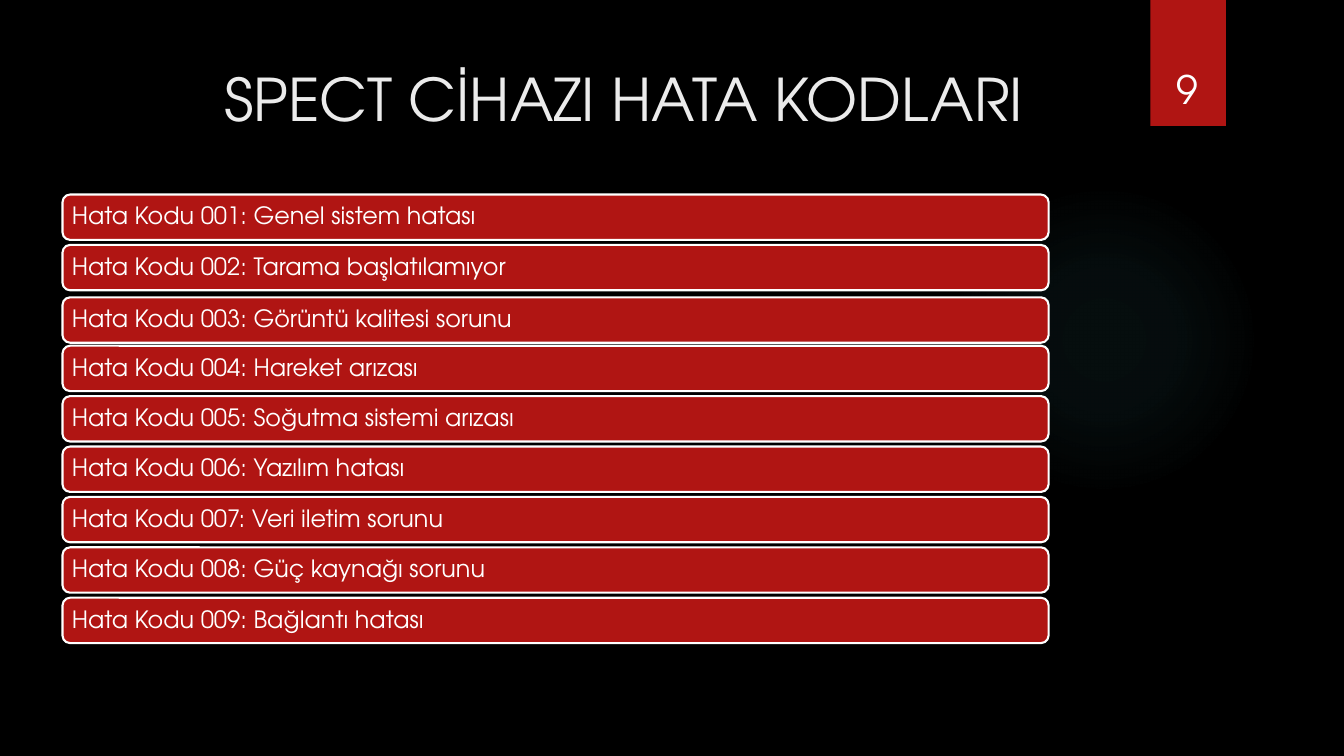
"""Build the slide that lists the SPECT device error codes."""
from lxml.etree import fromstring
from pptx import Presentation
from pptx.dml.color import RGBColor
from pptx.enum.shapes import MSO_SHAPE
from pptx.enum.text import MSO_ANCHOR, PP_ALIGN
from pptx.util import Inches, Pt

TITLE = "SPECT CİHAZI HATA KODLARI"
PAGE_NUMBER = "9"
ERRORS = [
    "Genel sistem hatası",
    "Tarama başlatılamıyor",
    "Görüntü kalitesi sorunu",
    "Hareket arızası",
    "Soğutma sistemi arızası",
    "Yazılım hatası",
    "Veri iletim sorunu",
    "Güç kaynağı sorunu",
    "Bağlantı hatası",
]
FONT = "TeX Gyre Adventor"
BLACK, RED, WHITE, PALE, TEAL = "000000", "B01513", "FFFFFF", "EBEBEB", "50B9C1"
GLOW_STOPS = [(0, 7), (36, 6), (69, 0)]
FIRST_TOP, ROW_STEP = 1.93, 0.5
ROW_NUDGE = {3: 0.02}
NAMESPACE = "http://schemas.openxmlformats.org/drawingml/2006/main"


def color(value):
    return RGBColor.from_string(value)


def add_shape(page, kind, left, top, width, height, fill):
    shape = page.shapes.add_shape(
        kind, Inches(left), Inches(top), Inches(width), Inches(height))
    shape.shadow.inherit = False
    shape.fill.solid()
    shape.fill.fore_color.rgb = color(fill)
    shape.line.fill.background()
    return shape


def write(frame, text, size, text_color, align, anchor):
    frame.word_wrap = True
    frame.vertical_anchor = anchor
    para = frame.paragraphs[0]
    para.text = text
    para.alignment = align
    para.font.name = FONT
    para.font.size = Pt(size)
    para.font.color.rgb = color(text_color)
    return para


def add_glow(page):
    glow = add_shape(page, MSO_SHAPE.OVAL, 9.41, 1.83, 3.08, 3.08, TEAL)
    stops = "".join(
        f'<a:gs pos="{position * 1000}"><a:srgbClr val="{TEAL}">'
        f'<a:alpha val="{opacity * 1000}"/></a:srgbClr></a:gs>'
        for position, opacity in GLOW_STOPS)
    gradient = fromstring(
        f'<a:gradFill xmlns:a="{NAMESPACE}"><a:gsLst>{stops}</a:gsLst>'
        '<a:path path="circle"><a:fillToRect l="50000" t="50000" r="50000" b="50000"/>'
        '</a:path></a:gradFill>')
    properties = glow.element.spPr
    properties.replace(properties.find(f"{{{NAMESPACE}}}solidFill"), gradient)


def add_error(page, number, description):
    top = FIRST_TOP + (number - 1) * ROW_STEP + ROW_NUDGE.get(number, 0)
    bar = add_shape(page, MSO_SHAPE.ROUNDED_RECTANGLE, 0.62, top, 9.78, 0.45, RED)
    bar.line.color.rgb = color(WHITE)
    bar.line.width = Pt(1.5)
    frame = bar.text_frame
    frame.margin_left = frame.margin_right = Inches(0.07)
    frame.margin_top = frame.margin_bottom = Inches(0.07)
    para = write(frame, f"Hata Kodu {number:03}: {description}", 17, WHITE,
                 PP_ALIGN.LEFT, MSO_ANCHOR.MIDDLE)
    para.line_spacing = 0.9
    para.space_after = Pt(6)


def main():
    deck = Presentation()
    deck.slide_width, deck.slide_height = Inches(13.33), Inches(7.5)
    page = deck.slides.add_slide(deck.slide_layouts[5])
    page.background.fill.solid()
    page.background.fill.fore_color.rgb = color(BLACK)

    add_glow(page)
    add_shape(page, MSO_SHAPE.RECTANGLE, 11.41, 0, 0.75, 1.25, RED)

    title = page.shapes.title
    title.left, title.top = Inches(1.04), Inches(0.57)
    title.width, title.height = Inches(10.29), Inches(1.53)
    write(title.text_frame, TITLE, 42, PALE, PP_ALIGN.CENTER, MSO_ANCHOR.TOP)

    for number, description in enumerate(ERRORS, start=1):
        add_error(page, number, description)

    number_box = page.shapes.add_textbox(
        Inches(11.32), Inches(0.32), Inches(0.92), Inches(0.84))
    write(number_box.text_frame, PAGE_NUMBER, 28, WHITE,
          PP_ALIGN.CENTER, MSO_ANCHOR.BOTTOM)
    deck.save("out.pptx")


if __name__ == "__main__":
    main()
